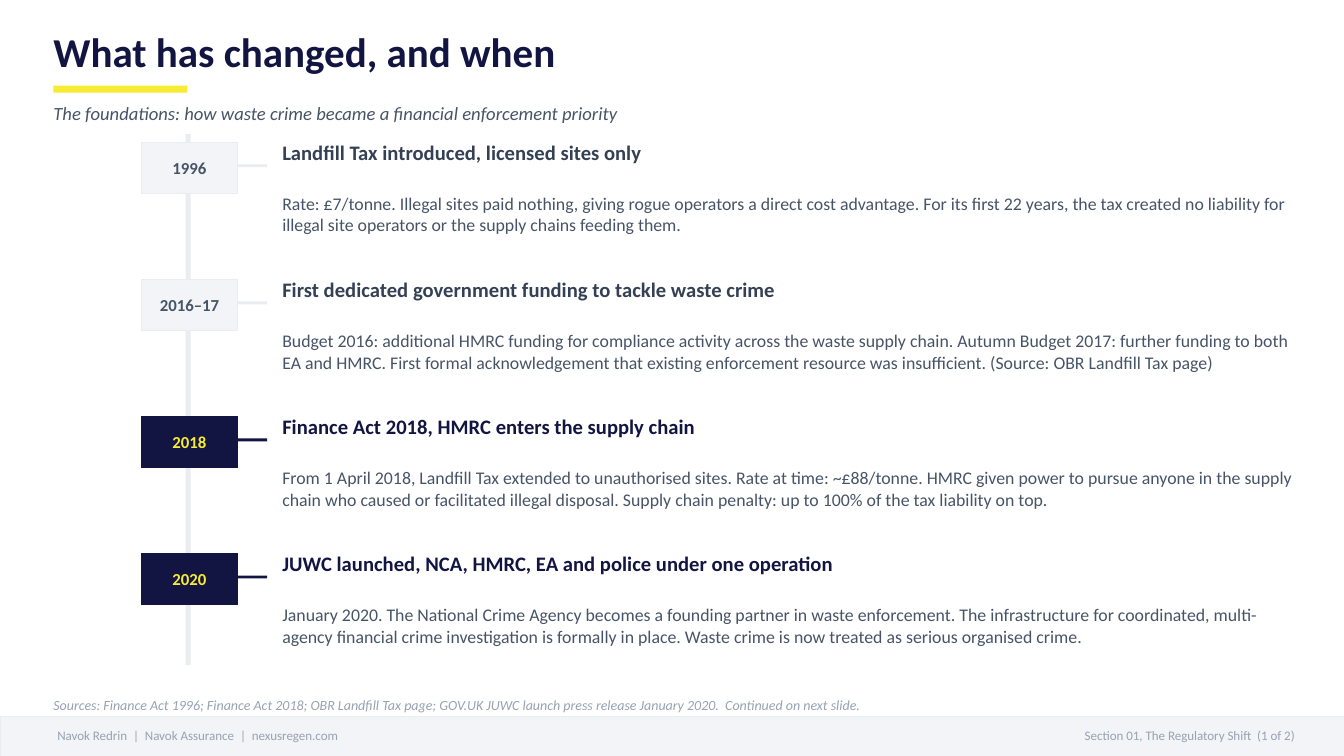
from pptx import Presentation
from pptx import util as u
from pptx.dml.color import RGBColor
from pptx.enum import shapes, text

COLORS = {
    "navy": "121541", "yellow": "F7EC33", "slate": "475467", "charcoal": "344054",
    "rule": "EAECF0", "pale": "F2F4F7", "muted": "98A2B3",
}
LEFT, WIDTH = 0.53, 12.27
LEFT_ALIGN, CENTER, RIGHT = text.PP_ALIGN.LEFT, text.PP_ALIGN.CENTER, text.PP_ALIGN.RIGHT

MILESTONES = [
    ("1996", "Landfill Tax introduced, licensed sites only",
     "Rate: £7/tonne. Illegal sites paid nothing, giving rogue operators a direct cost "
     "advantage. For its first 22 years, the tax created no liability for illegal site "
     "operators or the supply chains feeding them.", False),
    ("2016–17", "First dedicated government funding to tackle waste crime",
     "Budget 2016: additional HMRC funding for compliance activity across the waste supply "
     "chain. Autumn Budget 2017: further funding to both EA and HMRC. First formal "
     "acknowledgement that existing enforcement resource was insufficient. "
     "(Source: OBR Landfill Tax page)", False),
    ("2018", "Finance Act 2018, HMRC enters the supply chain",
     "From 1 April 2018, Landfill Tax extended to unauthorised sites. Rate at time: "
     "~£88/tonne. HMRC given power to pursue anyone in the supply chain who caused or "
     "facilitated illegal disposal. Supply chain penalty: up to 100% of the tax liability "
     "on top.", True),
    ("2020", "JUWC launched, NCA, HMRC, EA and police under one operation",
     "January 2020. The National Crime Agency becomes a founding partner in waste "
     "enforcement. The infrastructure for coordinated, multi-agency financial crime "
     "investigation is formally in place. Waste crime is now treated as serious organised "
     "crime.", True),
]

presentation = Presentation()
presentation.slide_width, presentation.slide_height = u.Inches(13.33), u.Inches(7.5)
slide = presentation.slides.add_slide(presentation.slide_layouts[5])


def write(shape, words, size, color, bold=False, italic=False, align=LEFT_ALIGN, inset=0):
    """Fill a shape with one vertically centred, wrapped paragraph."""
    frame = shape.text_frame
    frame.text = words
    frame.word_wrap = True
    frame.auto_size = text.MSO_AUTO_SIZE.NONE
    frame.vertical_anchor = text.MSO_ANCHOR.MIDDLE
    frame.margin_left = frame.margin_right = u.Inches(inset)
    frame.margin_top = frame.margin_bottom = 0
    paragraph = frame.paragraphs[0]
    paragraph.alignment = align
    font = paragraph.runs[0].font
    font.name, font.size, font.bold, font.italic = "Calibri", u.Pt(size), bold, italic
    font.color.rgb = RGBColor.from_string(COLORS[color])


def add_box(left, top, width, height, fill, line=None, line_width=0.75):
    box = slide.shapes.add_shape(shapes.MSO_SHAPE.RECTANGLE, *map(u.Inches, (left, top, width, height)))
    box.shadow.inherit = False
    box.fill.solid()
    box.fill.fore_color.rgb = RGBColor.from_string(COLORS[fill])
    if line:
        box.line.color.rgb = RGBColor.from_string(COLORS[line])
        box.line.width = u.Pt(line_width)
    else:
        box.line.fill.background()
    return box


# Heading
title = slide.shapes.title
title.left, title.top = u.Inches(LEFT), u.Inches(0.21)
title.width, title.height = u.Inches(WIDTH), u.Inches(0.6)
write(title, "What has changed, and when", 29.3, "navy", bold=True)
add_box(LEFT, 0.85, 1.33, 0.07, "yellow")
subtitle = slide.shapes.add_textbox(*map(u.Inches, (LEFT, 0.96, WIDTH, 0.32)))
write(subtitle, "The foundations: how waste crime became a financial enforcement priority",
      13.3, "slate", italic=True)

# Timeline
add_box(1.84, 1.33, 0.05, 5.27, "rule")
for index, (year, heading, detail, key) in enumerate(MILESTONES):
    top = 1.31 + 1.36 * index
    accent = "navy" if key else "rule"
    badge = add_box(1.4, top + 0.1, 0.96, 0.51, "navy" if key else "pale", accent)
    write(badge, year, 12, "yellow" if key else "slate", bold=True, align=CENTER)
    add_box(2.36, top + 0.32, 0.29, 0.03, accent)
    heading_box = slide.shapes.add_textbox(*map(u.Inches, (2.8, top, 10.13, 0.4)))
    write(heading_box, heading, 14.7, "navy" if key else "charcoal", bold=True)
    detail_box = slide.shapes.add_textbox(*map(u.Inches, (2.8, top + 0.4, 10.13, 0.83)))
    write(detail_box, detail, 12.7, "slate")

# Sources and footer
sources = slide.shapes.add_textbox(*map(u.Inches, (LEFT, 6.87, WIDTH, 0.24)))
write(sources, "Sources: Finance Act 1996; Finance Act 2018; OBR Landfill Tax page; GOV.UK JUWC "
      "launch press release January 2020.  Continued on next slide.", 10, "muted", italic=True)
add_box(0, 7.11, 13.33, 0.39, "pale", "rule", 0.5)
for left, width, words, align in [
    (0.47, 7.33, "Navok Redrin  |  Navok Assurance  |  nexusregen.com", LEFT_ALIGN),
    (8.67, 4.27, "Section 01, The Regulatory Shift  (1 of 2)", RIGHT),
]:
    footer = slide.shapes.add_textbox(*map(u.Inches, (left, 7.12, width, 0.35)))
    write(footer, words, 9.3, "muted", align=align, inset=0.1)

presentation.save("out.pptx")
